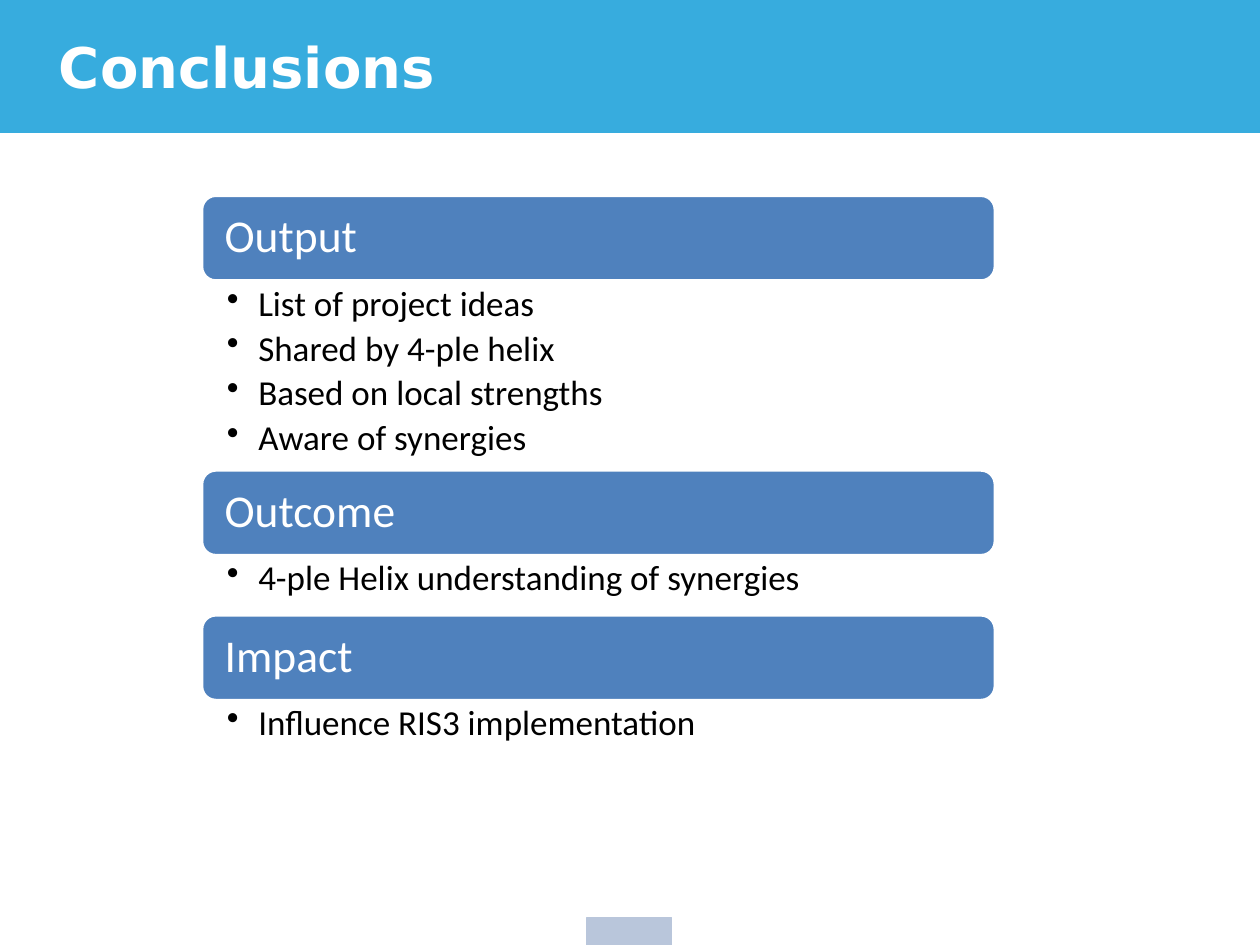
from pptx import Presentation
from pptx.dml.color import RGBColor
from pptx.enum import shapes, text
from pptx.oxml.ns import qn
from pptx.util import Inches, Pt
from lxml import etree

TITLE = "Conclusions"
# heading, bullets, height of the bullet area
PARTS = [
    ("Output", ["List of project ideas", "Shared by 4-ple helix",
                "Based on local strengths", "Aware of synergies"], 1.5),
    ("Outcome", ["4-ple Helix understanding of synergies"], 0.47),
    ("Impact", ["Influence RIS3 implementation"], 0.47),
]
COLORS = {"band": "37ACDE", "tab": "174389", "bar": "4F81BD",
          "white": "FFFFFF", "black": "000000"}
LEFT, TOP, WIDTH, BAR = 1.6, 1.55, 6.3, 0.68

deck = Presentation()
deck.slide_width, deck.slide_height = Inches(10), Inches(7.5)
slide = deck.slides.add_slide(deck.slide_layouts[6])


def color(name):
    return RGBColor.from_string(COLORS[name])


def block(box, fill, line=None, weight=0.75, kind="RECTANGLE", alpha=None):
    shape = slide.shapes.add_shape(getattr(shapes.MSO_SHAPE, kind),
                                   *map(Inches, box))
    shape.shadow.inherit = False
    shape.fill.solid()
    shape.fill.fore_color.rgb = color(fill)
    if alpha is not None:
        tint = shape.fill._xPr.find(qn("a:solidFill"))[0]
        etree.SubElement(tint, qn("a:alpha"), val=str(alpha * 1000))
    if line:
        shape.line.color.rgb = color(line)
        shape.line.width = Pt(weight)
    else:
        shape.line.fill.background()
    return shape


def write(shape, lines, size, ink, font="Calibri", bold=False, inset=(0.1, 0.05),
          anchor="TOP", spacing=None, after=0, bullet=False):
    frame = shape.text_frame
    frame.word_wrap = True
    frame.vertical_anchor = getattr(text.MSO_ANCHOR, anchor)
    frame.margin_left = frame.margin_right = Inches(inset[0])
    frame.margin_top = frame.margin_bottom = Inches(inset[1])
    for i, line in enumerate(lines):
        para = frame.add_paragraph() if i else frame.paragraphs[0]
        para.alignment = text.PP_ALIGN.LEFT
        para.line_spacing = spacing
        para.space_after = Pt(after)
        if bullet:
            props = para._p.get_or_add_pPr()
            props.set("marL", str(Inches(0.25)))
            props.set("indent", str(Inches(-0.25)))
            etree.SubElement(props, qn("a:buChar"), char="•")
        run = para.add_run()
        run.text = line
        run.font.size, run.font.name, run.font.bold = Pt(size), font, bold
        run.font.color.rgb = color(ink)


def label(box, lines, **style):
    write(slide.shapes.add_textbox(*map(Inches, box)), lines, **style)


block((4.66, 7.28, 0.67, 0.22), "tab", "tab")
block((0, 0, 10, 1.05), "band", "band")
block((0, 1.07, 10, 6.43), "white", alpha=70)

y = TOP
for head, points, height in PARTS:
    bar = block((LEFT, y, WIDTH, BAR), "bar", "white", 2, "ROUNDED_RECTANGLE")
    write(bar, [head], size=26, ink="white", inset=(0.15, 0.11),
          anchor="MIDDLE", spacing=0.9)
    y += BAR
    label((LEFT, y, WIDTH, height), points, size=20, ink="black",
          inset=(0.2, 0.04), spacing=0.9, after=4, bullet=True)
    y += height

label((0.37, 0.21, 9.84, 0.64), [TITLE], size=32, ink="white",
      font="DejaVu Sans", bold=True)

deck.save("out.pptx")
